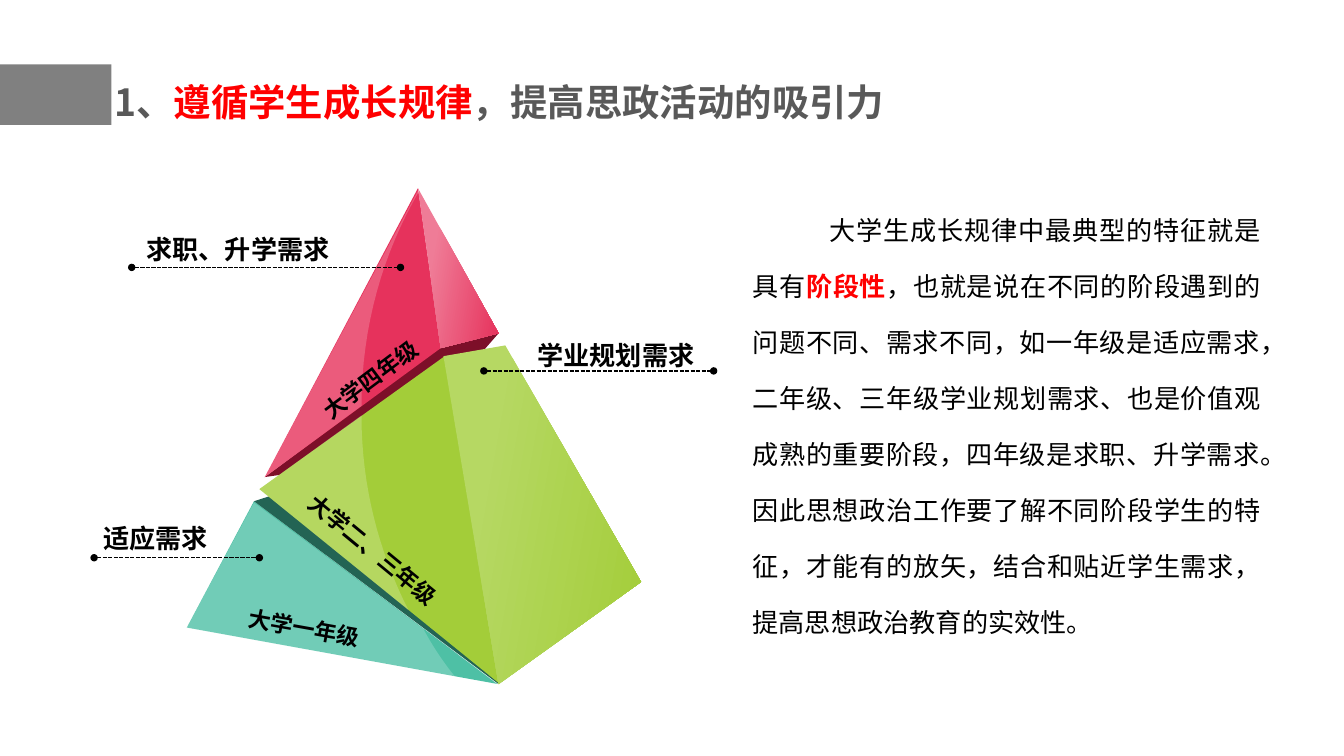
from dataclasses import dataclass
from typing import Optional

import pptx
import pptx.dml.color
import pptx.enum.dml
import pptx.enum.shapes
import pptx.enum.text
import pptx.oxml
import pptx.oxml.ns
import pptx.util

RGBColor = pptx.dml.color.RGBColor
Align = pptx.enum.text.PP_ALIGN
PX = 9144  # 100 px to the inch
SLIDE_WIDTH = 1000 * PX
SLIDE_HEIGHT = SLIDE_WIDTH * 9 // 16
FONT = "Noto Sans CJK SC"
BODY_FONT = "Calibri"

BLACK = RGBColor(0x00, 0x00, 0x00)
WHITE = RGBColor(0xFF, 0xFF, 0xFF)
RED = RGBColor(0xFF, 0x00, 0x00)
GRAY = RGBColor(0x80, 0x80, 0x80)
DARK_GRAY = RGBColor(0x59, 0x59, 0x59)
TEAL = RGBColor(0x4E, 0xC0, 0xA5)
DARK_TEAL = RGBColor(0x23, 0x64, 0x54)
PINK = RGBColor(0xE6, 0x32, 0x5C)
LIGHT_PINK = RGBColor(0xEF, 0x7C, 0x97)
DARK_RED = RGBColor(0x7D, 0x0F, 0x29)
GREEN = RGBColor(0xA3, 0xCD, 0x39)
LIGHT_GREEN = RGBColor(0xB6, 0xD8, 0x63)

Point = tuple[float, float]


@dataclass
class Facet:
    points: list[Point]
    color: RGBColor
    gradient_start: Optional[RGBColor] = None
    opacity: int = 100


@dataclass
class Label:
    text: str
    left: int
    top: int
    width: int
    height: int
    size: int
    rotation: float = 0
    line_points: Optional[int] = None


@dataclass
class Leader:
    start: int
    end: int
    y: int


@dataclass
class Span:
    text: str
    color: RGBColor
    bold: bool


def curve(a: Point, b: Point, c: Point, d: Point, steps: int = 16) -> list[Point]:
    """Points along a cubic Bezier curve from a to d."""
    points = []
    for step in range(steps + 1):
        t = step / steps
        weights = ((1 - t) ** 3, 3 * t * (1 - t) ** 2, 3 * t * t * (1 - t), t ** 3)
        x, y = (sum(w * p[axis] for w, p in zip(weights, (a, b, c, d))) for axis in (0, 1))
        points.append((x, y))
    return points


FIRST_YEAR = [
    Facet([(139, 467), (189, 373), (370, 509)], TEAL),
    Facet([(189, 373), (288, 341), (475, 432), (371, 509)], DARK_TEAL),
    Facet([(189, 374), *curve((315, 468), (322, 481), (330, 493), (339, 504)), (139, 467)],
          WHITE, opacity=20),
]
FOURTH_YEAR = [
    Facet([(328, 258), (371, 248), (289, 342), (197, 355)], DARK_RED),
    Facet([(197, 355), (311, 140), (328, 259)], PINK),
    Facet([(328, 259), (311, 140), (371, 248)], PINK, gradient_start=LIGHT_PINK),
    Facet([(312, 140), *curve((312, 142), (285, 188), (269, 243), (269, 302)), (197, 355)],
          WHITE, opacity=20),
]
MIDDLE_YEARS = [
    Facet([(193, 364), (331, 265), (372, 509)], GREEN),
    Facet([(330, 265), (376, 257), (477, 433), (371, 509)], GREEN, gradient_start=LIGHT_GREEN),
    Facet([*curve((269, 309), (269, 362), (282, 411), (304, 454)), (193, 364)],
          WHITE, opacity=20),
]
LABELS = [
    Label("大学四年级", 220, 256, 135, 31, 12, 323.2, 16),
    Label("大学二、三年级", 208, 399, 158, 31, 12, 39.5, 16),
    Label("大学一年级", 175, 453, 135, 31, 12, 10.2, 16),
    Label("求职、升学需求", 99, 169, 251, 34, 14),
    Label("适应需求", 67, 384, 162, 34, 14),
    Label("学业规划需求", 390, 248, 151, 34, 14),
]
LEADERS = [Leader(98, 298, 199), Leader(70, 193, 415), Leader(360, 531, 276)]
TITLE = [
    Span("1、", DARK_GRAY, True),
    Span("遵循学生成长规律", RED, True),
    Span("，提高思政活动的吸引力", DARK_GRAY, True),
]
BODY = [
    Span("大学生成长规律中最典型的特征就是具有", BLACK, False),
    Span("阶段性", RED, True),
    Span("，也就是说在不同的阶段遇到的问题不同、需求不同，如一年级是适应需求，"
         "二年级、三年级学业规划需求、也是价值观成熟的重要阶段，四年级是求职、升学需求。"
         "因此思想政治工作要了解不同阶段学生的特征，才能有的放矢，结合和贴近学生需求，"
         "提高思想政治教育的实效性。", BLACK, False),
]


def add_child(parent, tag: str, **attributes: str) -> None:
    child = pptx.oxml.parse_xml(f"<{tag} {pptx.oxml.ns.nsdecls('a')}/>")
    for name, value in attributes.items():
        child.set(name, value)
    parent.append(child)


def add_span(paragraph, span: Span, size: int, font: str = FONT) -> None:
    run = paragraph.add_run()
    run.text = span.text
    run.font.name = font
    run.font.size = pptx.util.Pt(size)
    run.font.bold = span.bold
    run.font.color.rgb = span.color
    add_child(run.font._element, "a:ea", typeface=FONT)


def prepare_text(shape, alignment: Align):
    """Set up a top-anchored wrapping frame and return its first paragraph."""
    frame = shape.text_frame
    frame.word_wrap = True
    frame.auto_size = pptx.enum.text.MSO_AUTO_SIZE.NONE
    frame.vertical_anchor = pptx.enum.text.MSO_ANCHOR.TOP
    paragraph = frame.paragraphs[0]
    paragraph.alignment = alignment
    paragraph.space_before = pptx.util.Pt(0)
    return paragraph


def place(shape, left: int, top: int, width: int, height: int) -> None:
    shape.left, shape.top = left * PX, top * PX
    shape.width, shape.height = width * PX, height * PX


def add_block(slide, facets: list[Facet]) -> None:
    group = slide.shapes.add_group_shape()
    for facet in facets:
        points = [(round(x * PX), round(y * PX)) for x, y in facet.points]
        builder = group.shapes.build_freeform(*points[0], scale=1.0)
        builder.add_line_segments(points[1:], close=True)
        shape = builder.convert_to_shape()
        shape.shadow.inherit = False
        shape.line.fill.background()
        if facet.gradient_start is not None:
            shape.fill.gradient()
            shape.fill.gradient_angle = 350
            first, last = shape.fill.gradient_stops
            first.position, first.color.rgb = 0.24, facet.gradient_start
            last.position, last.color.rgb = 1, facet.color
            continue
        shape.fill.solid()
        shape.fill.fore_color.rgb = facet.color
        if facet.opacity < 100:
            color = shape._element.spPr.find(".//" + pptx.oxml.ns.qn("a:srgbClr"))
            add_child(color, "a:alpha", val=str(facet.opacity * 1000))


def add_label(slide, label: Label) -> None:
    box = slide.shapes.add_textbox(0, 0, 0, 0)
    place(box, label.left, label.top, label.width, label.height)
    box.rotation = label.rotation
    paragraph = prepare_text(box, Align.JUSTIFY)
    if label.line_points:
        paragraph.line_spacing = pptx.util.Pt(label.line_points)
    add_span(paragraph, Span(label.text, BLACK, True), label.size)


def add_leader(slide, leader: Leader) -> None:
    y = leader.y * PX
    connector = slide.shapes.add_connector(
        pptx.enum.shapes.MSO_CONNECTOR.STRAIGHT, leader.start * PX, y, leader.end * PX, y)
    connector.line.color.rgb = BLACK
    connector.line.width = pptx.util.Pt(0.75)
    connector.line.dash_style = pptx.enum.dml.MSO_LINE.SQUARE_DOT
    line = connector.line._get_or_add_ln()
    for end in ("a:headEnd", "a:tailEnd"):
        add_child(line, end, type="oval", w="sm", len="sm")
    add_child(connector._element.spPr, "a:effectLst")


def fill_title(title) -> None:
    place(title, 75, 37, 614, 55)
    paragraph = prepare_text(title, Align.LEFT)
    paragraph.line_spacing = 1.5
    for span in TITLE:
        add_span(paragraph, span, 20)


def fill_body(body) -> None:
    place(body, 550, 136, 398, 341)
    paragraph = prepare_text(body, Align.JUSTIFY)
    paragraph.line_spacing = pptx.util.Pt(30)
    properties = paragraph._p.get_or_add_pPr()
    properties.set("marL", "0")
    properties.set("indent", str(57 * PX))
    add_child(properties, "a:buNone")
    for span in BODY:
        add_span(paragraph, span, 14, BODY_FONT)


def main() -> None:
    presentation = pptx.Presentation()
    presentation.slide_width, presentation.slide_height = SLIDE_WIDTH, SLIDE_HEIGHT
    slide = presentation.slides.add_slide(presentation.slide_layouts[1])
    fill_title(slide.shapes.title)
    fill_body(slide.placeholders[1])
    for facets in (FIRST_YEAR, FOURTH_YEAR, MIDDLE_YEARS):
        add_block(slide, facets)
    for leader in LEADERS:
        add_leader(slide, leader)
    for label in LABELS:
        add_label(slide, label)
    bar = slide.shapes.add_shape(pptx.enum.shapes.MSO_SHAPE.RECTANGLE, 0, 0, 0, 0)
    place(bar, 0, 48, 83, 45)
    bar.shadow.inherit = False
    bar.fill.solid()
    bar.fill.fore_color.rgb = GRAY
    bar.line.fill.background()
    presentation.save("out.pptx")


if __name__ == "__main__":
    main()
